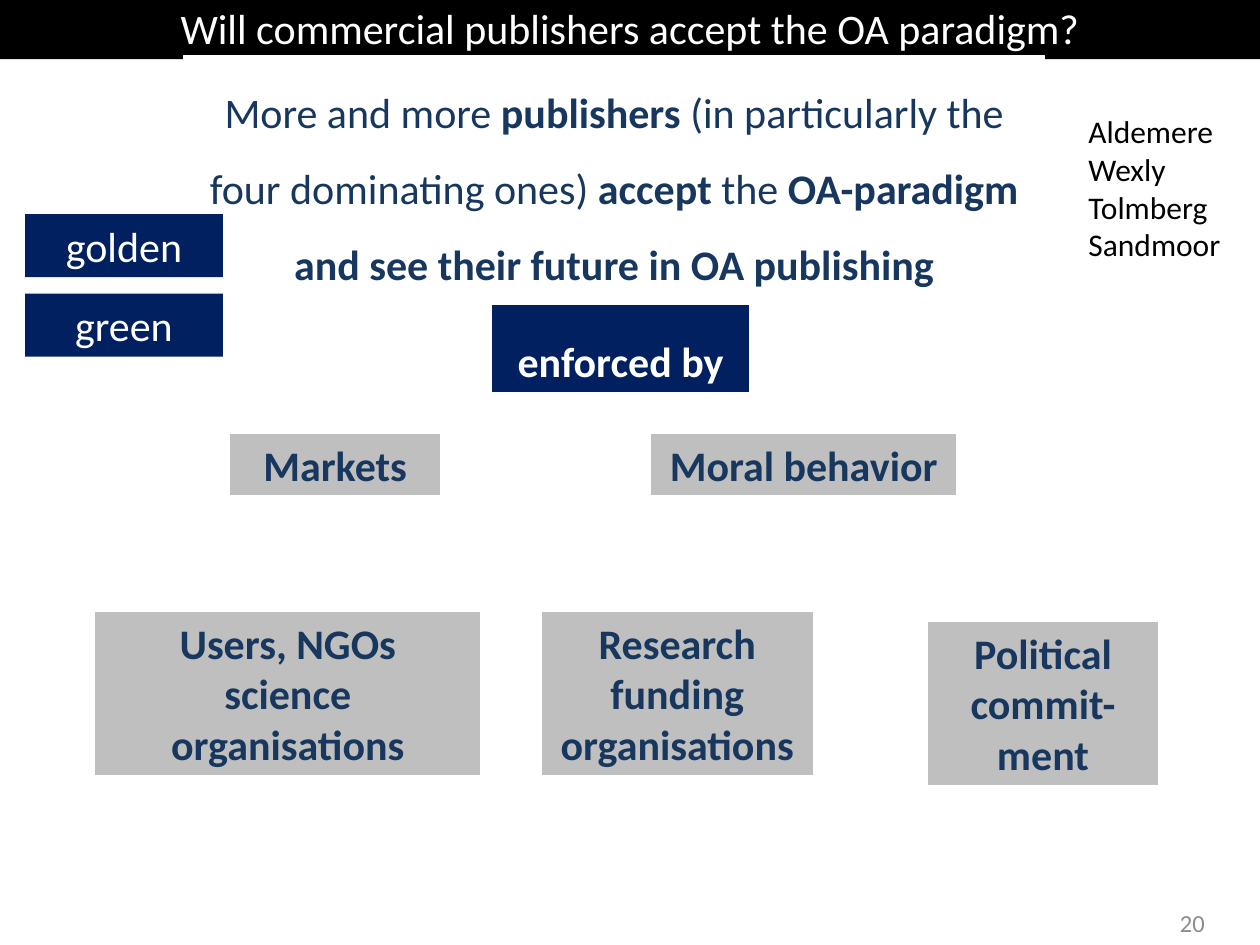
"""Builds the slide on commercial publishers and the OA paradigm."""
from dataclasses import dataclass
from typing import Optional

from pptx import Presentation
from pptx.dml.color import RGBColor
from pptx.enum.shapes import MSO_SHAPE
from pptx.enum.text import MSO_ANCHOR, MSO_AUTO_SIZE, PP_ALIGN
from pptx.util import Pt

RECT = MSO_SHAPE.RECTANGLE
TOP, MIDDLE = MSO_ANCHOR.TOP, MSO_ANCHOR.MIDDLE
GROW = MSO_AUTO_SIZE.SHAPE_TO_FIT_TEXT
LEFT, CENTER, RIGHT = PP_ALIGN.LEFT, PP_ALIGN.CENTER, PP_ALIGN.RIGHT
FONT = "Calibri"
BLACK, WHITE, GRAY, NAVY, INK, PALE = "000000", "FFFFFF", "BFBFBF", "002060", "17375E", "8C8C8C"


@dataclass(frozen=True)
class Run:
    text: str
    bold: bool = False


@dataclass(frozen=True)
class Box:
    left: float
    top: float
    width: float
    height: float
    paragraphs: list[list[Run]]
    color: str
    fill: Optional[str] = None
    line: Optional[str] = None
    size: float = 24
    align: PP_ALIGN = CENTER
    spacing: float = 1
    anchor: MSO_ANCHOR = TOP


def rgb(value: str) -> RGBColor:
    return RGBColor.from_string(value)


def lines(*texts: str, bold: bool = False) -> list[list[Run]]:
    return [[Run(text, bold)] for text in texts]


def write(tf, box: Box) -> None:
    tf.word_wrap = True
    tf.vertical_anchor = box.anchor
    tf.auto_size = GROW
    for i, runs in enumerate(box.paragraphs):
        p = tf.add_paragraph() if i else tf.paragraphs[0]
        p.alignment = box.align
        p.line_spacing = box.spacing
        for run in runs:
            r = p.add_run()
            r.text = run.text
            r.font.name = FONT
            r.font.size = Pt(box.size)
            r.font.bold = run.bold
            r.font.color.rgb = rgb(box.color)


def draw(shapes, box: Box) -> None:
    frame = [Pt(v) for v in (box.left, box.top, box.width, box.height)]
    if box.fill is None:
        sp = shapes.add_textbox(*frame)
    else:
        sp = shapes.add_shape(RECT, *frame)
        sp.shadow.inherit = False
        sp.fill.solid()
        sp.fill.fore_color.rgb = rgb(box.fill)
        if box.line is None:
            sp.line.fill.background()
        else:
            sp.line.color.rgb = rgb(box.line)
            sp.line.width = Pt(1)
    write(sp.text_frame, box)


def force(left: float, top: float, width: float, height: float, *texts: str) -> Box:
    return Box(left, top, width, height, lines(*texts, bold=True), INK, GRAY, WHITE)


STATEMENT = [[
    Run("More and more "), Run("publishers", True),
    Run(" (in particularly the four dominating ones) "), Run("accept", True),
    Run(" the "), Run("OA-paradigm and see their future in OA publishing", True),
]]
PUBLISHERS = lines("Aldemere", "Wexly", "Tolmberg", "Sandmoor")

BOXES = [
    Box(527.76, 512.64, 167.76, 28.8, lines("20"), PALE, size=14, align=RIGHT, anchor=MIDDLE),
    Box(0, -2.16, 720, 36, lines("Will commercial publishers accept the OA paradigm?"), WHITE, BLACK),
    Box(105.12, 31.68, 491.76, 138.24, STATEMENT, INK, WHITE, WHITE, spacing=1.5),
    force(54, 349.2, 221, 94.3, "Users, NGOs", "science organisations"),
    force(309, 349.2, 156, 94.3, "Research funding organisations"),
    force(530, 355, 132, 94.3, "Political commit-ment"),
    force(131, 247.7, 121, 36, "Markets"),
    force(371.5, 247.7, 175.5, 36, "Moral behavior"),
    Box(280.8, 173.5, 147.6, 51, lines("enforced by", bold=True), WHITE, NAVY, WHITE, spacing=1.5),
    Box(614.9, 60.5, 105.1, 94.3, PUBLISHERS, BLACK, size=18, align=LEFT),
]
ROADS = ["golden", "green"]


def main() -> None:
    prs = Presentation()
    prs.slide_width, prs.slide_height = Pt(720), Pt(540)
    s = prs.slides.add_slide(prs.slide_layouts[6])
    for box in BOXES:
        draw(s.shapes, box)
    group = s.shapes.add_group_shape()
    for i, road in enumerate(ROADS):
        draw(group.shapes, Box(14.4, 122.4 + 45.4 * i, 113, 36, lines(road), WHITE, NAVY))
    prs.save("out.pptx")


if __name__ == "__main__":
    main()
